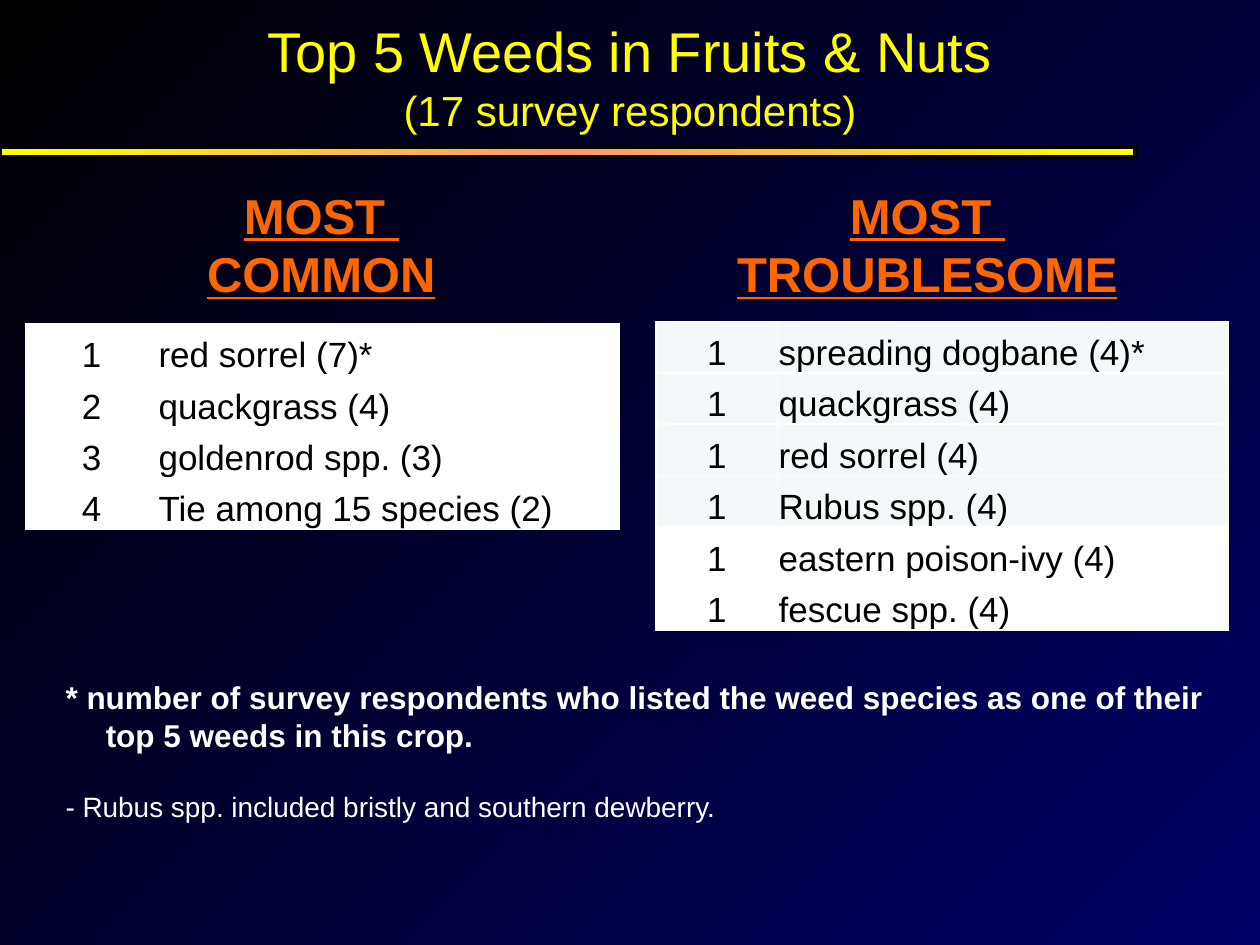
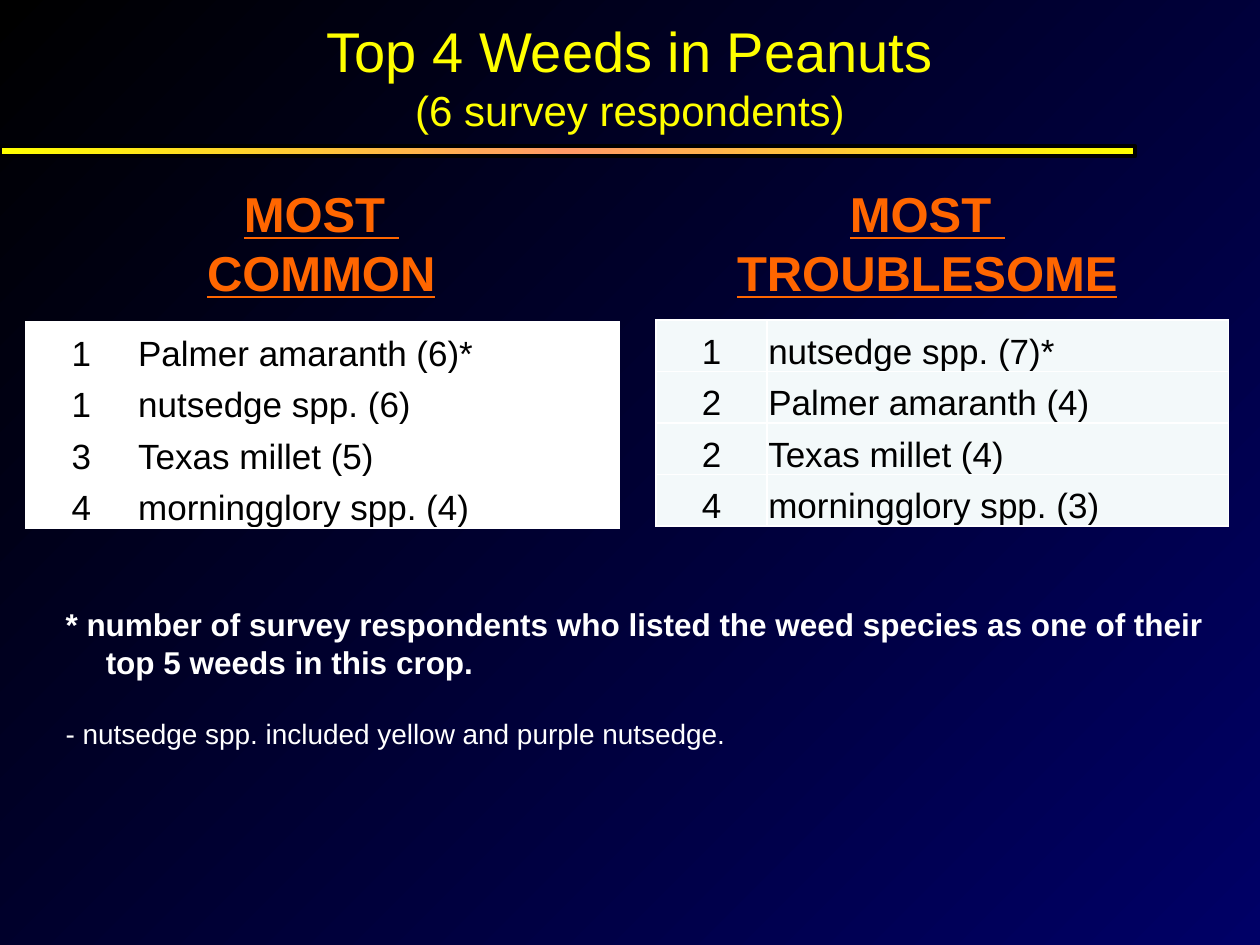
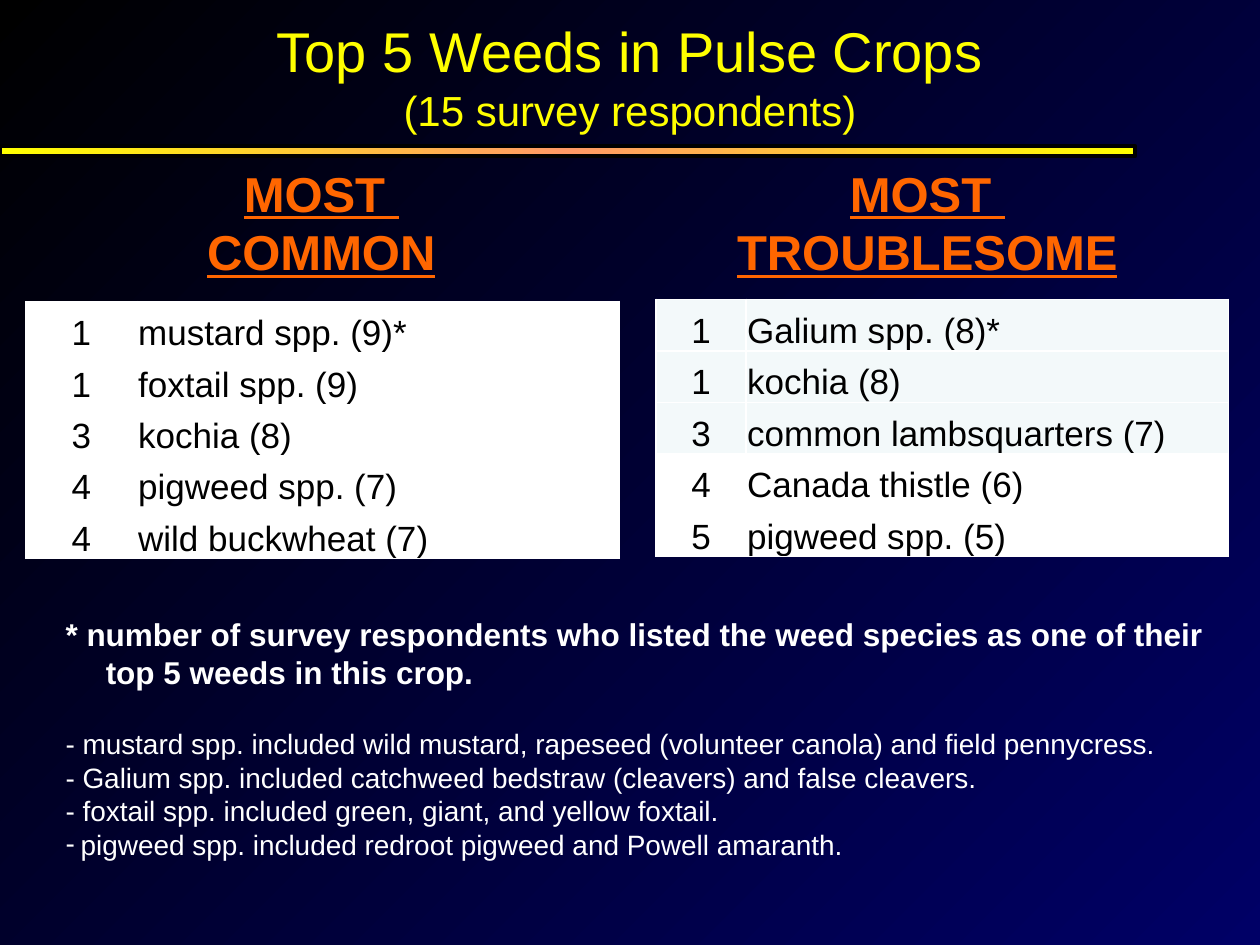
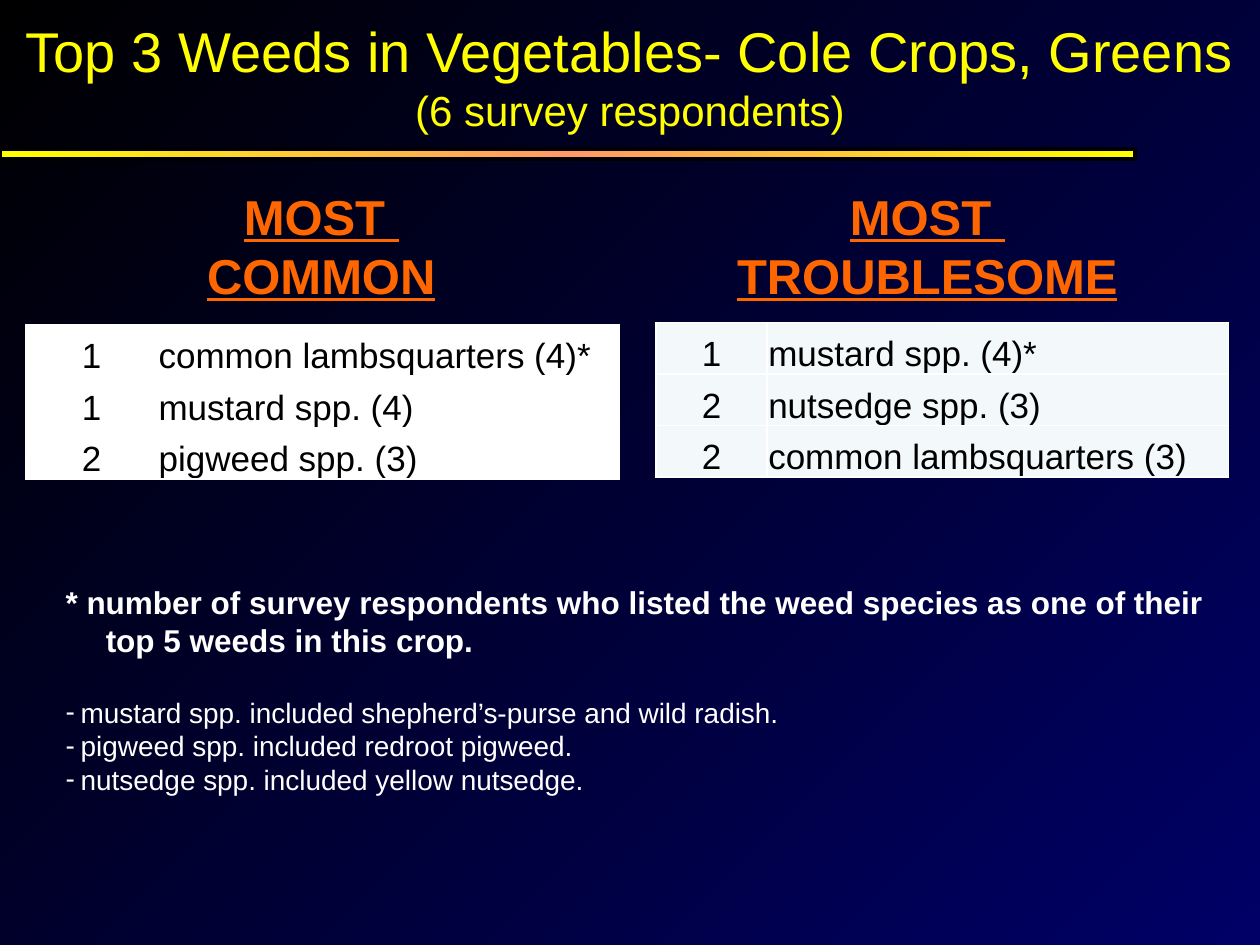
import copy
from dataclasses import dataclass

import pptx
import pptx.dml.color
import pptx.enum.shapes
import pptx.enum.text
import pptx.oxml.ns
import pptx.oxml.xmlchemy
import pptx.util
from lxml import etree

Pt = pptx.util.Pt
qn = pptx.oxml.ns.qn
ALIGN = pptx.enum.text.PP_ALIGN
ANCHOR = pptx.enum.text.MSO_ANCHOR
FIT = pptx.enum.text.MSO_AUTO_SIZE


@dataclass(frozen=True)
class Theme:
    font: str = "Arial"
    black: str = "000000"
    navy: str = "000066"
    yellow: str = "FFFF00"
    peach: str = "FF9966"
    orange: str = "FF6600"
    white: str = "FFFFFF"
    tint: str = "F3F9FA"
    title: int = 32
    count: int = 24
    head: int = 28
    cell: int = 20
    note: int = 18
    detail: int = 16


THEME = Theme()
WIDE, HIGH = 720, 540
ROW = 29.4
CAUTION = ("* number of survey respondents who listed the weed species as one of their",
           "top 5 weeds in this crop.")


@dataclass(frozen=True)
class Ranking:
    rank: float          # width of the rank column
    rows: tuple          # (rank, weed) pairs
    tinted: int = 0      # leading rows with a tint


@dataclass(frozen=True)
class Crop:
    title: str
    count: str
    bar: float
    head: float
    common: Ranking
    trouble: Ranking
    note: float
    details: tuple
    inset: float = 23.76


CROPS = (
    Crop("Top 5 Weeds in Fruits & Nuts", "(17 survey respondents)", 84.24, 102.24,
         Ranking(75, ((1, "red sorrel (7)*"), (2, "quackgrass (4)"),
                      (3, "goldenrod spp. (3)"), (4, "Tie among 15 species (2)"))),
         Ranking(69.3, ((1, "spreading dogbane (4)*"), (1, "quackgrass (4)"),
                        (1, "red sorrel (4)"), (1, "Rubus spp. (4)"),
                        (1, "eastern poison-ivy (4)"), (1, "fescue spp. (4)")), 4),
         383.76, ("- Rubus spp. included bristly and southern dewberry.",)),
    Crop("Top 4 Weeds in Peanuts", "(6 survey respondents)", 83.52, 101.52,
         Ranking(63.3, ((1, "Palmer amaranth (6)*"), (1, "nutsedge spp. (6)"),
                        (3, "Texas millet (5)"), (4, "morningglory spp. (4)"))),
         Ranking(63.3, ((1, "nutsedge spp. (7)*"), (2, "Palmer amaranth (4)"),
                        (2, "Texas millet (4)"), (4, "morningglory spp. (3)")), 4),
         342, ("- nutsedge spp. included yellow and purple nutsedge.",)),
    Crop("Top 5 Weeds in Pulse Crops", "(15 survey respondents)", 83.52, 89.7,
         Ranking(63.3, ((1, "mustard spp. (9)*"), (1, "foxtail spp. (9)"),
                        (3, "kochia (8)"), (4, "pigweed spp. (7)"),
                        (4, "wild buckwheat (7)"))),
         Ranking(51.2, ((1, "Galium spp. (8)*"), (1, "kochia (8)"),
                        (3, "common lambsquarters (7)"), (4, "Canada thistle (6)"),
                        (5, "pigweed spp. (5)")), 3),
         347.76, ("- mustard spp. included wild mustard, rapeseed (volunteer canola) and field pennycress.",
                  "- Galium spp. included catchweed bedstraw (cleavers) and false cleavers.",
                  "- foxtail spp. included green, giant, and yellow foxtail.",
                  "pigweed spp. included redroot pigweed and Powell amaranth.")),
    Crop("Top 3 Weeds in Vegetables- Cole Crops, Greens", "(6 survey respondents)", 84.96, 102.96,
         Ranking(75, ((1, "common lambsquarters (4)*"), (1, "mustard spp. (4)"),
                      (2, "pigweed spp. (3)"))),
         Ranking(63.3, ((1, "mustard spp. (4)*"), (2, "nutsedge spp. (3)"),
                        (2, "common lambsquarters (3)")), 3),
         329.76, ("mustard spp. included shepherd’s-purse and wild radish.",
                  "pigweed spp. included redroot pigweed.",
                  "nutsedge spp. included yellow nutsedge."), 0),
)


def shade(code):
    return pptx.dml.color.RGBColor.from_string(code)


def place(shape, left, top, width, height):
    shape.left, shape.top = Pt(left), Pt(top)
    shape.width, shape.height = Pt(width), Pt(height)


def write(para, text, size, color, bold=False, line=False):
    """Add one styled run to a paragraph."""
    run = para.add_run()
    run.text = text
    font = run.font
    font.name, font.size = THEME.font, Pt(size)
    font.bold, font.underline = bold, line
    font.color.rgb = shade(color)


def paras(frame, count):
    """Yield the first paragraph of a frame, then new ones."""
    yield frame.paragraphs[0]
    for _ in range(count - 1):
        yield frame.add_paragraph()


def blend(fill, colors, angle):
    """Fill with evenly spaced gradient stops."""
    fill.gradient()
    fill.gradient_angle = angle
    stops = fill.gradient_stops
    for stop, color, step in zip(stops, colors, range(len(colors))):
        stop.color.rgb = shade(color)
        stop.position = step / (len(colors) - 1)


def draw_title(slide, crop):
    shape = slide.shapes.title
    place(shape, crop.inset, 0, WIDE - 2 * crop.inset, 86.4)
    frame = shape.text_frame
    frame.auto_size = FIT.NONE
    frame.vertical_anchor = ANCHOR.MIDDLE
    lines = ((crop.title, THEME.title), (crop.count, THEME.count))
    for para, (text, size) in zip(paras(frame, 2), lines):
        para.alignment = ALIGN.CENTER
        write(para, text, size, THEME.yellow)


def draw_bar(slide, top):
    bar = slide.shapes.add_shape(pptx.enum.shapes.MSO_SHAPE.RECTANGLE,
                                 0, Pt(top), Pt(648.7), Pt(5.76))
    bar.shadow.inherit = False
    bar.line.color.rgb = shade(THEME.black)
    bar.line.width = Pt(2.25)
    bar.fill.gradient()
    stops = bar.element.spPr.find(".//" + qn("a:gsLst"))
    stops.append(copy.deepcopy(stops[-1]))
    blend(bar.fill, (THEME.yellow, THEME.peach, THEME.yellow), 0)


def draw_head(slide, word, left, top, width):
    box = slide.shapes.add_textbox(Pt(left), Pt(top), Pt(width), Pt(74.9))
    frame = box.text_frame
    frame.word_wrap = False
    frame.auto_size = FIT.SHAPE_TO_FIT_TEXT
    for para, text in zip(paras(frame, 2), ("MOST ", word)):
        para.alignment = ALIGN.CENTER
        write(para, text, THEME.head, THEME.orange, bold=True, line=True)


def edge(cell):
    """Give a cell thin white borders."""
    props = cell._tc.get_or_add_tcPr()
    for side in ("a:lnL", "a:lnR", "a:lnT", "a:lnB"):
        line = etree.SubElement(props, qn(side), w=str(Pt(1)))
        fill = etree.SubElement(line, qn("a:solidFill"))
        etree.SubElement(fill, qn("a:srgbClr"), val=THEME.white)


def draw_table(slide, data, left, top, width):
    count = len(data.rows)
    table = slide.shapes.add_table(count, 2, Pt(left), Pt(top),
                                   Pt(width), Pt(ROW * count)).table
    table.first_row = table.horz_banding = False
    table.columns[0].width = Pt(data.rank)
    table.columns[1].width = Pt(width - data.rank)
    for index, pair in enumerate(data.rows):
        table.rows[index].height = Pt(ROW)
        color = THEME.tint if index < data.tinted else THEME.white
        for col, (item, align) in enumerate(zip(pair, (ALIGN.CENTER, ALIGN.LEFT))):
            cell = table.cell(index, col)
            cell.margin_left = cell.margin_right = cell.margin_top = Pt(0.72)
            cell.margin_bottom = 0
            cell.vertical_anchor = ANCHOR.BOTTOM
            edge(cell)
            cell.fill.solid()
            cell.fill.fore_color.rgb = shade(color)
            para = cell.text_frame.paragraphs[0]
            para.alignment = align
            write(para, str(item), THEME.cell, THEME.black)


def indent(para, depth, mark=None, gap=0):
    """Hang a paragraph, with a bullet mark or with none."""
    para.space_before = Pt(gap)
    props = para._p.get_or_add_pPr()
    props.set("marL", str(Pt(depth)))
    props.set("indent", str(-Pt(depth)))
    if mark:
        etree.SubElement(props, qn("a:buChar"), char=mark)
    else:
        etree.SubElement(props, qn("a:buNone"))


def draw_notes(slide, crop):
    shape = slide.placeholders[1]
    extra = len(crop.details) - 1
    place(shape, 30.24, crop.note, 666, 92.2 + 19.4 * extra)
    frame = shape.text_frame
    frame.word_wrap = True
    frame.auto_size = FIT.SHAPE_TO_FIT_TEXT
    frame.vertical_anchor = ANCHOR.TOP
    first, *rest = paras(frame, len(crop.details) + 1)
    indent(first, 23)
    write(first, CAUTION[0], THEME.note, THEME.white, bold=True)
    first.add_line_break()
    write(first, CAUTION[1], THEME.note, THEME.white, bold=True)
    for index, (para, text) in enumerate(zip(rest, crop.details)):
        mark = None if text.startswith("-") else "-"
        indent(para, 8.64, mark, gap=0 if index else 20.7)
        write(para, text, THEME.detail, THEME.white)


def draw_crop(deck, crop):
    slide = deck.slides.add_slide(deck.slide_layouts[1])
    draw_title(slide, crop)
    draw_bar(slide, crop.bar)
    draw_head(slide, "COMMON", 97.2, crop.head, 172.8)
    draw_head(slide, "TROUBLESOME", 412.56, crop.head, 234.72)
    draw_table(slide, crop.common, 14.9, crop.head + 82.6, 339.1)
    draw_table(slide, crop.trouble, 375, crop.head + 81.4, 326.9)
    draw_notes(slide, crop)


def main():
    deck = pptx.Presentation()
    deck.slide_width, deck.slide_height = Pt(WIDE), Pt(HIGH)
    blend(deck.slide_master.background.fill, (THEME.black, THEME.navy), 315)
    for crop in CROPS:
        draw_crop(deck, crop)
    deck.save("out.pptx")


if __name__ == "__main__":
    main()
